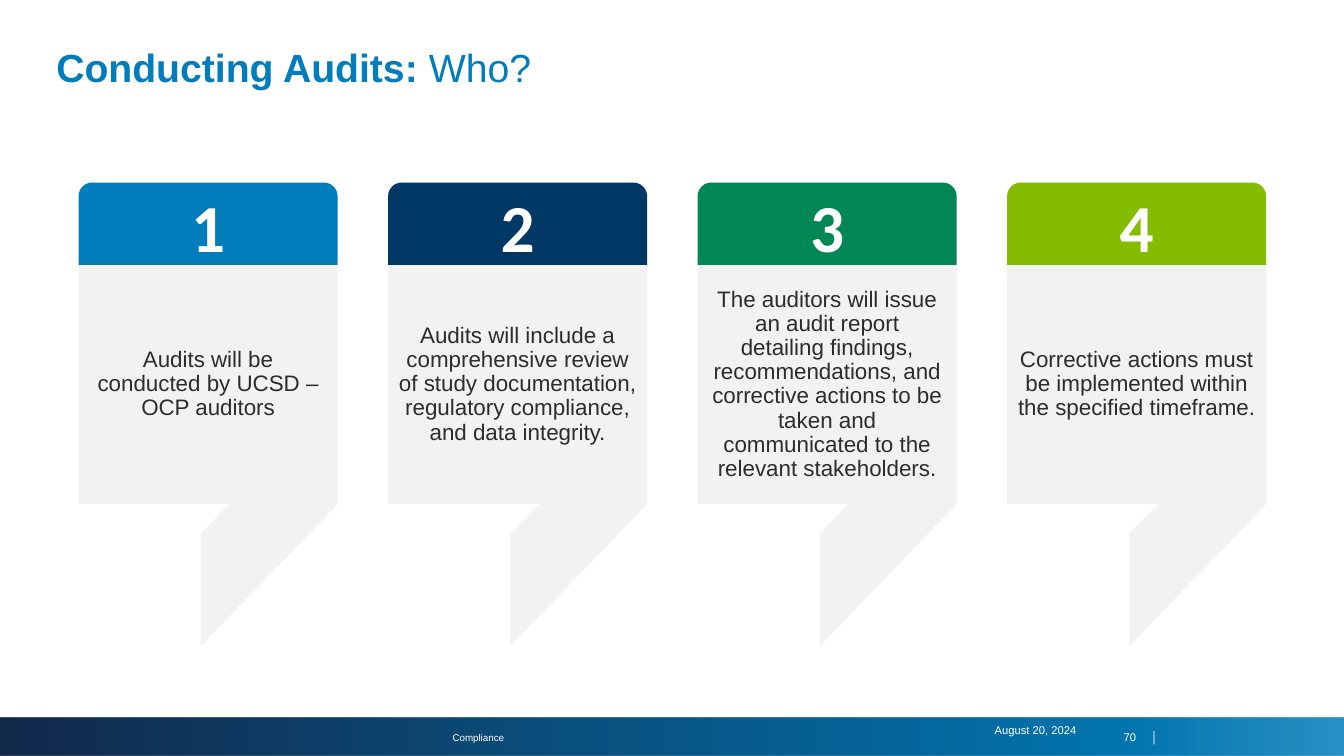
import dataclasses

import lxml.etree
import pptx
import pptx.dml.color
import pptx.enum.shapes
import pptx.enum.text
import pptx.oxml
import pptx.oxml.ns
import pptx.shapes.autoshape
import pptx.slide
import pptx.util

Cm = pptx.util.Cm
RGBColor = pptx.dml.color.RGBColor
Preset = pptx.enum.shapes.MSO_SHAPE
Align = pptx.enum.text.PP_ALIGN
Anchor = pptx.enum.text.MSO_ANCHOR

BLUE = RGBColor(0x00, 0x7D, 0xBA)
NAVY = RGBColor(0x00, 0x38, 0x65)
GREEN = RGBColor(0x00, 0x87, 0x55)
LIME = RGBColor(0x84, 0xBD, 0x00)
PANEL = RGBColor(0xF2, 0xF2, 0xF2)
INK = RGBColor(0x2C, 0x2C, 0x2D)
WHITE = RGBColor(0xFF, 0xFF, 0xFF)
BAR_DARK = RGBColor(0x13, 0x29, 0x4B)
BAR_MID = RGBColor(0x02, 0x75, 0xAF)

CARD_LEFT, CARD_PITCH, CARD_WIDTH = 1.98, 7.8, 6.53
HEADER_TOP, HEADER_HEIGHT = 4.6, 2.08
BODY_TOP, BODY_HEIGHT = HEADER_TOP + HEADER_HEIGHT, 6.02
TAIL_WIDTH, TAIL_HEIGHT = 3.45, 3.58
FOOTER_HEIGHT = 0.58


@dataclasses.dataclass(frozen=True)
class Area:
    left: float
    top: float
    width: float
    height: float

    def lengths(self) -> tuple[Cm, Cm, Cm, Cm]:
        return Cm(self.left), Cm(self.top), Cm(self.width), Cm(self.height)


@dataclasses.dataclass(frozen=True)
class Step:
    color: RGBColor
    text: str


@dataclasses.dataclass(frozen=True)
class FooterItem:
    area: Area
    text: str
    size: float
    align: Align
    tab: float | None = None


STEPS = [
    Step(BLUE, "Audits will be conducted by UCSD –OCP auditors"),
    Step(NAVY, "Audits will include a comprehensive review of study documentation, "
               "regulatory compliance, and data integrity."),
    Step(GREEN, "The auditors will issue an audit report\ndetailing findings, "
                "recommendations, and corrective actions to be taken and "
                "communicated to the relevant stakeholders."),
    Step(LIME, "Corrective actions must be implemented within the specified timeframe."),
]

FOOTER = [
    FooterItem(Area(23.32, 18.11, 4.06, FOOTER_HEIGHT), "August 20, 2024", 8, Align.RIGHT),
    FooterItem(Area(1.17, 18.29, 21.77, FOOTER_HEIGHT), "Compliance", 7, Align.CENTER),
    FooterItem(Area(28.07, 18.29, 1.4, FOOTER_HEIGHT), "70\t│", 8, Align.LEFT, 0.69),
]


def write(box: pptx.shapes.autoshape.Shape, text: str, *, size: float, color: RGBColor,
          font: str = "Arial", bold: bool = False, align: Align = Align.CENTER,
          spacing: float = 1.0, tab: float | None = None) -> None:
    frame = box.text_frame
    frame.word_wrap = True
    frame.vertical_anchor = Anchor.MIDDLE
    para = frame.paragraphs[0]
    para.alignment = align
    para.line_spacing = spacing
    if tab is not None:
        properties = para._p.get_or_add_pPr()
        tabs = lxml.etree.SubElement(properties, pptx.oxml.ns.qn("a:tabLst"))
        lxml.etree.SubElement(tabs, pptx.oxml.ns.qn("a:tab"), pos=str(Cm(tab)), algn="l")
    for number, line in enumerate(text.split("\n")):
        if number:
            para.add_line_break()
        span = para.add_run()
        span.text = line
        span.font.name = font
        span.font.size = pptx.util.Pt(size)
        span.font.bold = bold
        span.font.color.rgb = color


def add_block(page: pptx.slide.Slide, preset: Preset, area: Area,
              color: RGBColor) -> pptx.shapes.autoshape.Shape:
    shape = page.shapes.add_shape(preset, *area.lengths())
    shape.shadow.inherit = False
    shape.fill.solid()
    shape.fill.fore_color.rgb = color
    shape.line.fill.background()
    return shape


def add_footer_bar(page: pptx.slide.Slide) -> None:
    bar = add_block(page, Preset.RECTANGLE, Area(0, 18.08, 33.87, 0.97), BAR_MID)
    gradient = pptx.oxml.parse_xml(
        f'<a:gradFill {pptx.oxml.ns.nsdecls("a")} rotWithShape="1"><a:gsLst>'
        f'<a:gs pos="0"><a:srgbClr val="{BAR_DARK}"/></a:gs>'
        f'<a:gs pos="83000"><a:srgbClr val="{BAR_MID}"/></a:gs>'
        f'<a:gs pos="100000"><a:srgbClr val="{BLUE}"><a:alpha val="84000"/></a:srgbClr></a:gs>'
        '</a:gsLst><a:lin ang="0" scaled="0"/></a:gradFill>')
    solid = bar._element.spPr.find(pptx.oxml.ns.qn("a:solidFill"))
    bar._element.spPr.replace(solid, gradient)


def add_title(page: pptx.slide.Slide) -> None:
    box = page.shapes.add_textbox(*Area(1.17, 1.07, 31.55, 1.37).lengths())
    for text, bold in (("Conducting Audits:", True), (" Who?", False)):
        write(box, text, size=28, color=BLUE, bold=bold, align=Align.LEFT, spacing=0.9)


def add_step(page: pptx.slide.Slide, index: int, step: Step) -> None:
    left = CARD_LEFT + index * CARD_PITCH
    header = add_block(page, Preset.ROUND_2_SAME_RECTANGLE,
                       Area(left, HEADER_TOP, CARD_WIDTH, HEADER_HEIGHT), step.color)
    write(header, str(index + 1), size=48, color=WHITE, font="Calibri", bold=True)
    body = add_block(page, Preset.RECTANGLE,
                     Area(left, BODY_TOP, CARD_WIDTH, BODY_HEIGHT), PANEL)
    write(body, step.text, size=16, color=INK, spacing=0.9)
    tail = add_block(page, Preset.DIAGONAL_STRIPE,
                     Area(left + CARD_WIDTH - TAIL_WIDTH, BODY_TOP + BODY_HEIGHT,
                          TAIL_WIDTH, TAIL_HEIGHT), PANEL)
    tail.adjustments[0] = 0.21


def main() -> None:
    deck = pptx.Presentation()
    deck.slide_width, deck.slide_height = Cm(33.87), Cm(19.05)
    page = deck.slides.add_slide(deck.slide_layouts[6])
    add_footer_bar(page)
    add_title(page)
    for item in FOOTER:
        box = page.shapes.add_textbox(*item.area.lengths())
        write(box, item.text, size=item.size, color=WHITE, align=item.align, tab=item.tab)
    for index, step in enumerate(STEPS):
        add_step(page, index, step)
    deck.save("out.pptx")


if __name__ == "__main__":
    main()
